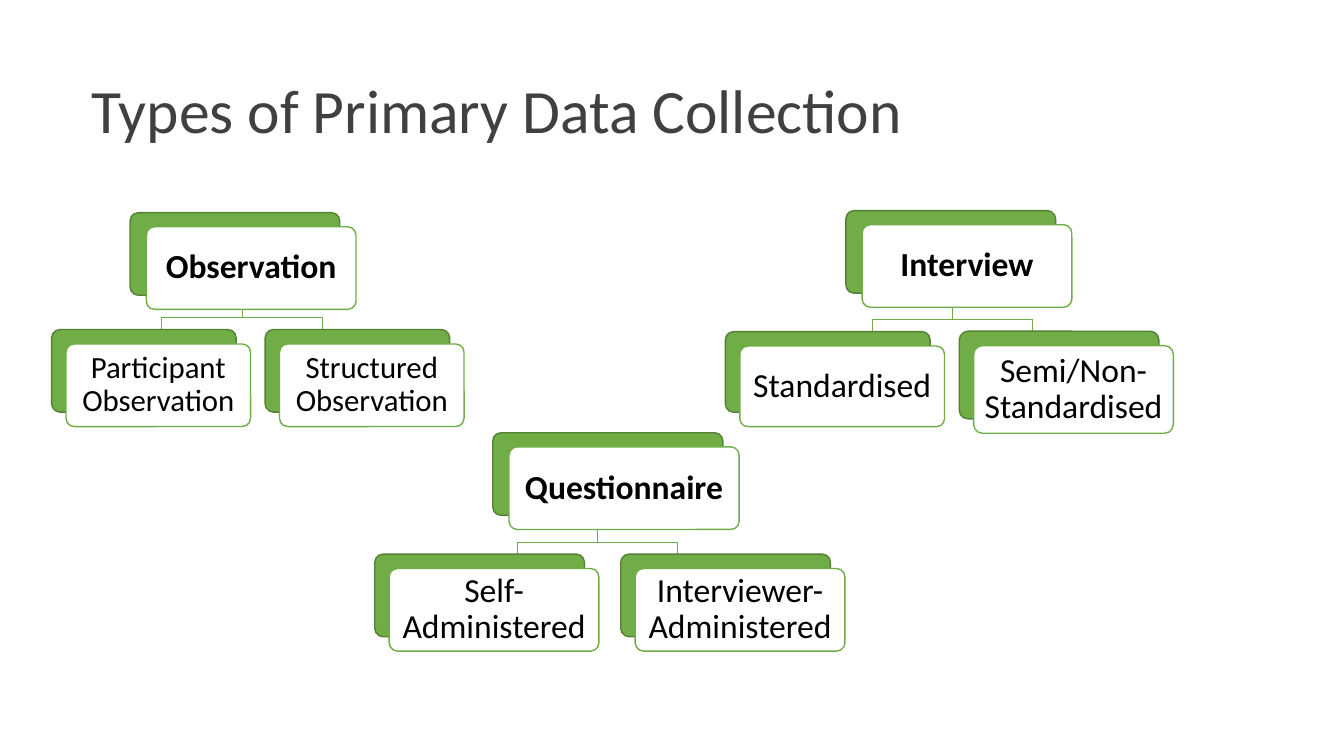
import pptx
import pptx.util
import pptx.dml.color
import pptx.enum.shapes
import pptx.enum.text
from dataclasses import dataclass

Pt = pptx.util.Pt
RGB = pptx.dml.color.RGBColor.from_string

TITLE = "Types of Primary Data Collection"
TREES = [
    {
        "trunk": 172.8,
        "root": ("Observation", 92.9, 151.9, 149.8, 59),
        "leaf_size": 22,
        "leaves": [
            ("Participant Observation", 36.9, 235.4, 131.8, 59),
            ("Structured Observation", 189.4, 235.4, 131.8, 59),
        ],
    },
    {
        "trunk": 680.4,
        "root": ("Interview", 604.2, 150.4, 149.8, 59),
        "leaf_size": 24,
        "leaves": [
            ("Standardised", 518.2, 236.9, 146.2, 57.6),
            ("Semi/Non- Standardised", 685.2, 236.6, 142.6, 62.6),
        ],
    },
    {
        "trunk": 427,
        "root": ("Questionnaire", 352, 309.1, 164.4, 59),
        "leaf_size": 24,
        "leaves": [
            ("Self-Administered", 267.7, 395.8, 149.8, 59),
            ("Interviewer-Administered", 443.4, 395.8, 149.8, 59),
        ],
    },
]


@dataclass(frozen=True)
class Theme:
    font: str = "Calibri"
    title_color: str = "404041"
    text_color: str = "000000"
    green: str = "70AD47"
    dark_green: str = "538035"
    white: str = "FFFFFF"
    title_size: int = 44
    root_size: int = 24


THEME = Theme()
ROOT_OFFSET = (11.6, 10.1)
LEAF_OFFSET = (10.3, 10.3)
BRANCH_REACH = 57.2
BRANCH_HEIGHT = 27.3
BRANCH_BEND = 18.6
INSET = 5


def style_text(para, size, color, bold=False):
    para.line_spacing = 0.9
    para.font.name = THEME.font
    para.font.size = Pt(size)
    para.font.bold = bold
    para.font.color.rgb = RGB(color)


def add_branch(page, trunk, leaf_top, side):
    top = leaf_top - BRANCH_HEIGHT
    bend = top + BRANCH_BEND
    end = trunk + side * BRANCH_REACH
    builder = page.shapes.build_freeform(Pt(trunk), Pt(top))
    corners = [(trunk, bend), (end, bend), (end, leaf_top)]
    builder.add_line_segments([(Pt(x), Pt(y)) for x, y in corners], close=False)
    branch = builder.convert_to_shape()
    branch.shadow.inherit = False
    branch.fill.background()
    branch.line.color.rgb = RGB(THEME.green)
    branch.line.width = Pt(0.5)


def add_panel(page, left, top, width, height, fill, line):
    kind = pptx.enum.shapes.MSO_SHAPE.ROUNDED_RECTANGLE
    panel = page.shapes.add_shape(kind, Pt(left), Pt(top), Pt(width), Pt(height))
    panel.adjustments[0] = 0.1
    panel.shadow.inherit = False
    panel.fill.solid()
    panel.fill.fore_color.rgb = RGB(fill)
    panel.line.color.rgb = RGB(line)
    panel.line.width = Pt(1)
    return panel


def add_card(page, node, offset, size, bold=False):
    label, left, top, width, height = node
    add_panel(page, left, top, width, height, THEME.green, THEME.dark_green)
    card = add_panel(page, left + offset[0], top + offset[1], width, height,
                     THEME.white, THEME.green)
    frame = card.text_frame
    frame.margin_left = frame.margin_right = Pt(INSET)
    frame.margin_top = frame.margin_bottom = Pt(INSET)
    frame.word_wrap = True
    frame.vertical_anchor = pptx.enum.text.MSO_ANCHOR.MIDDLE
    frame.text = label
    para = frame.paragraphs[0]
    para.alignment = pptx.enum.text.PP_ALIGN.CENTER
    style_text(para, size, THEME.text_color, bold)


def add_title(page):
    title = page.shapes.title
    title.left, title.top, title.width, title.height = Pt(58.3), Pt(28.8), Pt(828), Pt(104.4)
    frame = title.text_frame
    frame.text = TITLE
    frame.auto_size = pptx.enum.text.MSO_AUTO_SIZE.NONE
    frame.vertical_anchor = pptx.enum.text.MSO_ANCHOR.MIDDLE
    para = frame.paragraphs[0]
    para.alignment = pptx.enum.text.PP_ALIGN.LEFT
    style_text(para, THEME.title_size, THEME.title_color)


def main():
    deck = pptx.Presentation()
    deck.slide_width, deck.slide_height = Pt(960), Pt(540)
    page = deck.slides.add_slide(deck.slide_layouts[5])
    add_title(page)
    for tree in TREES:
        for side, leaf in zip((-1, 1), tree["leaves"]):
            add_branch(page, tree["trunk"], leaf[2], side)
        for leaf in tree["leaves"]:
            add_card(page, leaf, LEAF_OFFSET, tree["leaf_size"])
        add_card(page, tree["root"], ROOT_OFFSET, THEME.root_size, bold=True)
    deck.save("out.pptx")


if __name__ == "__main__":
    main()
